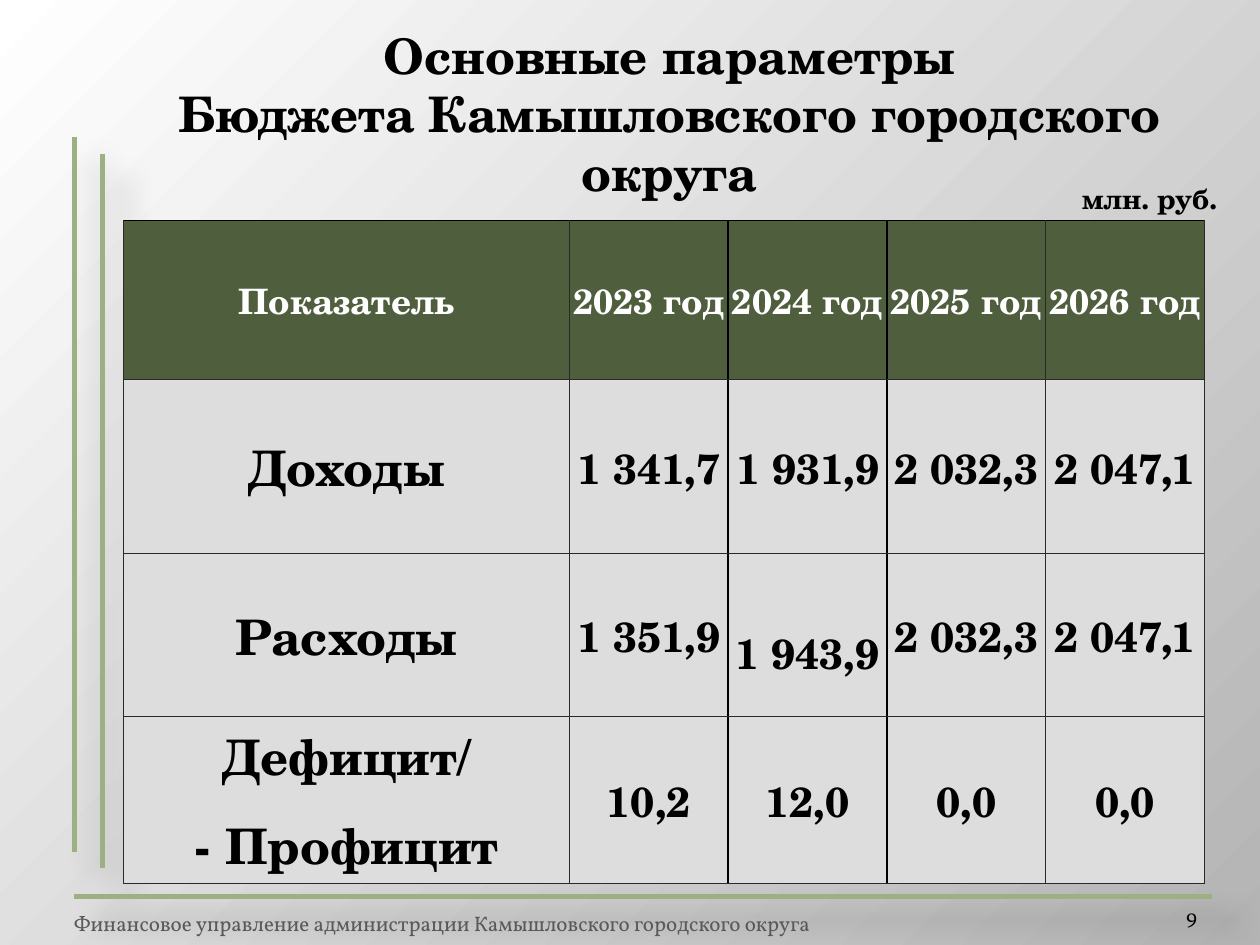
from lxml import etree
from pptx import Presentation
from pptx import util as u
from pptx.dml.color import RGBColor
from pptx.enum import shapes, text
from pptx.oxml import ns, parse_xml

Cm, Pt = u.Cm, u.Pt
COLORS = {
    "black": "000000", "white": "FFFFFF", "grey": "B4B4B4", "sage": "9CB084",
    "footer": "595959", "header": "4F5E3C", "cell": "DDDDDD", "grid": "292929",
}
SERIF, SMALL = "TeX Gyre Schola", "Vollkorn"
CENTER, RIGHT = text.PP_ALIGN.CENTER, text.PP_ALIGN.RIGHT
A = ns.nsdecls("a")


def add_text(para, words, size, color="black", font=SERIF, bold=True, align=None):
    para.alignment = align
    span = para.add_run()
    span.text = words
    span.font.size, span.font.name, span.font.bold = Pt(size), font, bold
    span.font.color.rgb = RGBColor.from_string(COLORS[color])


def set_borders(cell, borders):
    """Draw the left, right, top and bottom borders, each (color, points) or None."""
    props = cell._tc.get_or_add_tcPr()
    for i, (side, border) in enumerate(zip("LRTB", borders)):
        if border:
            color, points = border
            paint = f'<a:solidFill><a:srgbClr val="{COLORS[color]}"/></a:solidFill>'
        else:
            points, paint = 0, "<a:noFill/>"
        props.insert(i, parse_xml(f'<a:ln{side} {A} w="{Pt(points)}">{paint}</a:ln{side}>'))


deck = Presentation()
deck.slide_width, deck.slide_height = Cm(25.4), Cm(19.05)
page = deck.slides.add_slide(deck.slide_layouts[5])

# Background: radial gradient from the top left corner
fill = page.background.fill
fill.gradient()
for stop, color in zip(fill.gradient_stops, ("white", "grey")):
    stop.color.rgb = RGBColor.from_string(COLORS[color])
gradient = page._element.find(".//" + ns.qn("a:gradFill"))
gradient.replace(gradient.find(ns.qn("a:lin")), parse_xml(
    f'<a:path {A} path="circle"><a:fillToRect r="100000" b="100000"/></a:path>'))

# Decorative lines with a soft shadow
for ends in ((1.5, 2.77, 1.5, 17.17), (2.06, 3.1, 2.06, 17.5), (1.5, 18.08, 24.43, 18.08)):
    line = page.shapes.add_connector(shapes.MSO_CONNECTOR.STRAIGHT, *map(Cm, ends))
    line.line.color.rgb = RGBColor.from_string(COLORS["sage"])
    line.line.width = Pt(3)
    line._element.spPr.append(parse_xml(
        f'<a:effectLst {A}><a:outerShdw blurRad="{Pt(15)}" dist="{Pt(18)}" dir="2700000">'
        f'<a:srgbClr val="{COLORS["black"]}"><a:alpha val="26000"/></a:srgbClr>'
        '</a:outerShdw></a:effectLst>'))

# Title
title = page.shapes.title
title.left, title.top, title.width, title.height = map(Cm, (2.59, 0.38, 21.82, 2.64))
frame = title.text_frame
frame.auto_size = text.MSO_AUTO_SIZE.NONE
frame.vertical_anchor = text.MSO_ANCHOR.TOP
add_text(frame.paragraphs[0], "Основные параметры", 28, align=CENTER)
add_text(frame.add_paragraph(), "Бюджета Камышловского городского округа", 28, align=CENTER)

# Budget table
ROWS = [
    ["Показатель", "2023 год", "2024 год", "2025 год", "2026 год"],
    ["Доходы", "1 341,7", "1 931,9", "2 032,3", "2 047,1"],
    ["Расходы", "1 351,9", "1 943,9", "2 032,3", "2 047,1"],
    ["Дефицит/\n- Профицит", "10,2", "12,0", "0,0", "0,0"],
]
widths, heights = [8.99] + [3.2] * 4, [1.27, 3.2, 3.51, 3.28, 3.28]
table = page.shapes.add_table(len(heights), len(widths), Cm(2.49), Cm(3.18),
                              Cm(sum(widths)), Cm(sum(heights))).table
table.first_row = table.horz_banding = False
for column, width in zip(table.columns, widths):
    column.width = Cm(width)
for row, height in zip(table.rows, heights):
    row.height = Cm(height)

thin, thick = ("grid", 0.5), ("black", 1)
verticals = [thin, thin, thick, thick, thin, thin]

# Clear band above the header
for cell in table.rows[0].cells:
    cell.fill.background()
    set_borders(cell, (None, None, None, thick))
table.cell(0, 1).merge(table.cell(0, 4))

for r, values in enumerate(ROWS, 1):
    for c, value in enumerate(values):
        cell = table.cell(r, c)
        header = r == 1
        cell.fill.solid()
        cell.fill.fore_color.rgb = RGBColor.from_string(COLORS["header" if header else "cell"])
        set_borders(cell, (verticals[c], verticals[c + 1], thick if header else thin, thin))
        cell.vertical_anchor = text.MSO_ANCHOR.MIDDLE
        cell.margin_left = cell.margin_right = cell.margin_top = Cm(0.03)
        cell.margin_bottom = 0
        size = 20 if header else 28 if c == 0 else 24
        for i, words in enumerate(value.split("\n")):
            para = cell.text_frame.add_paragraph() if i else cell.text_frame.paragraphs[0]
            if i:
                para.space_before = Pt(8)
            add_text(para, words, size, "white" if header else "black", align=CENTER)
table.cell(3, 2).margin_top = Cm(0.72)  # this figure sits lower than its row

# Unit label, footer and page number
for place, words, size, color, font, bold, align in (
    ((21.56, 3.53, 4.17, 0.94), "млн. руб.", 16, "black", SERIF, True, None),
    ((1.24, 18.24, 23.19, 0.76), "Финансовое управление администрации Камышловского городского округа",
     12, "footer", SMALL, False, None),
    ((22.02, 17.83, 2.11, 1.02), "9", 12, "black", SMALL, False, RIGHT),
):
    box = page.shapes.add_textbox(*map(Cm, place))
    frame = box.text_frame
    frame.word_wrap = True
    if align == RIGHT:
        frame.margin_left = frame.margin_right = 0
        frame.vertical_anchor = text.MSO_ANCHOR.BOTTOM
    add_text(frame.paragraphs[0], words, size, color, font, bold, align)

deck.save("out.pptx")
